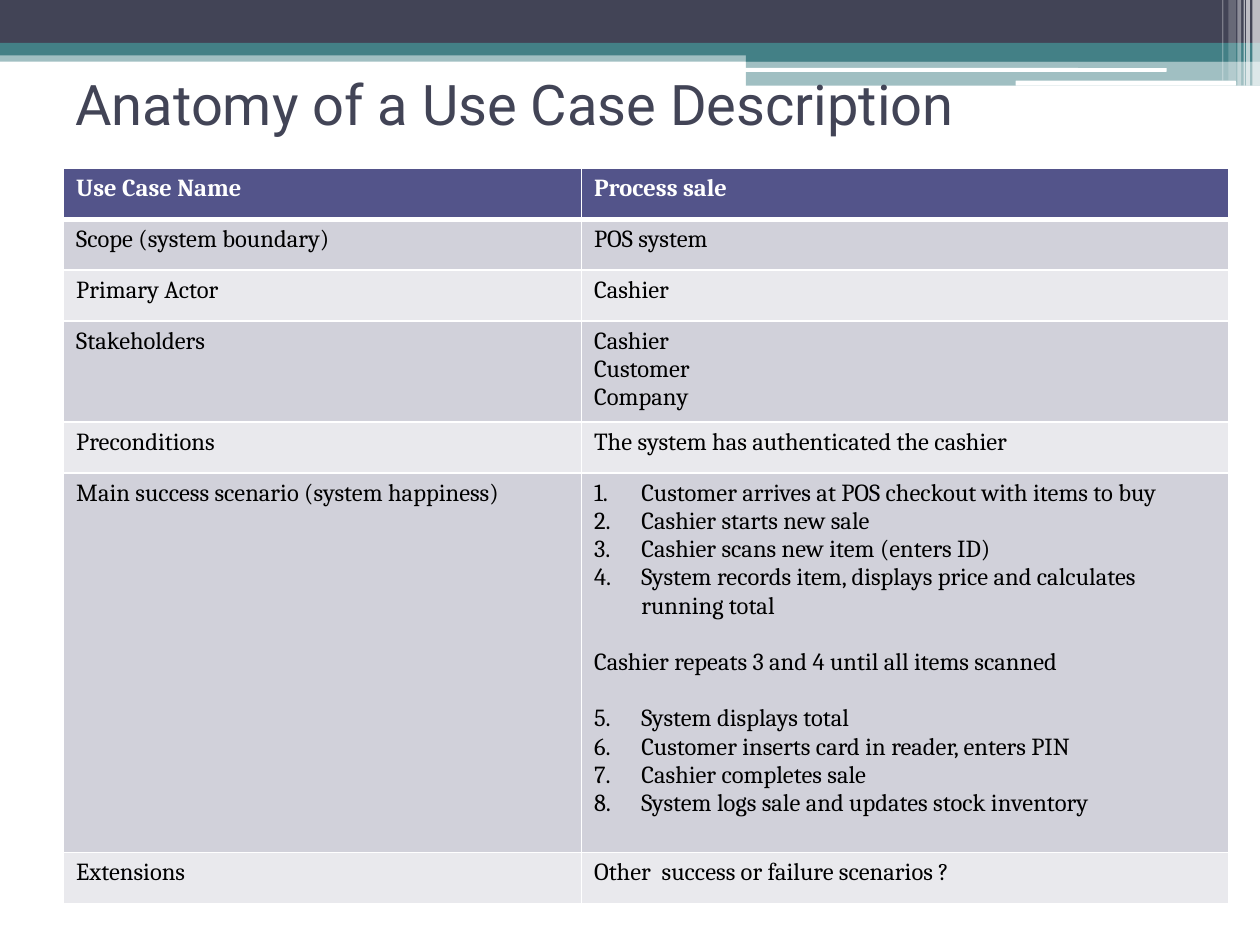
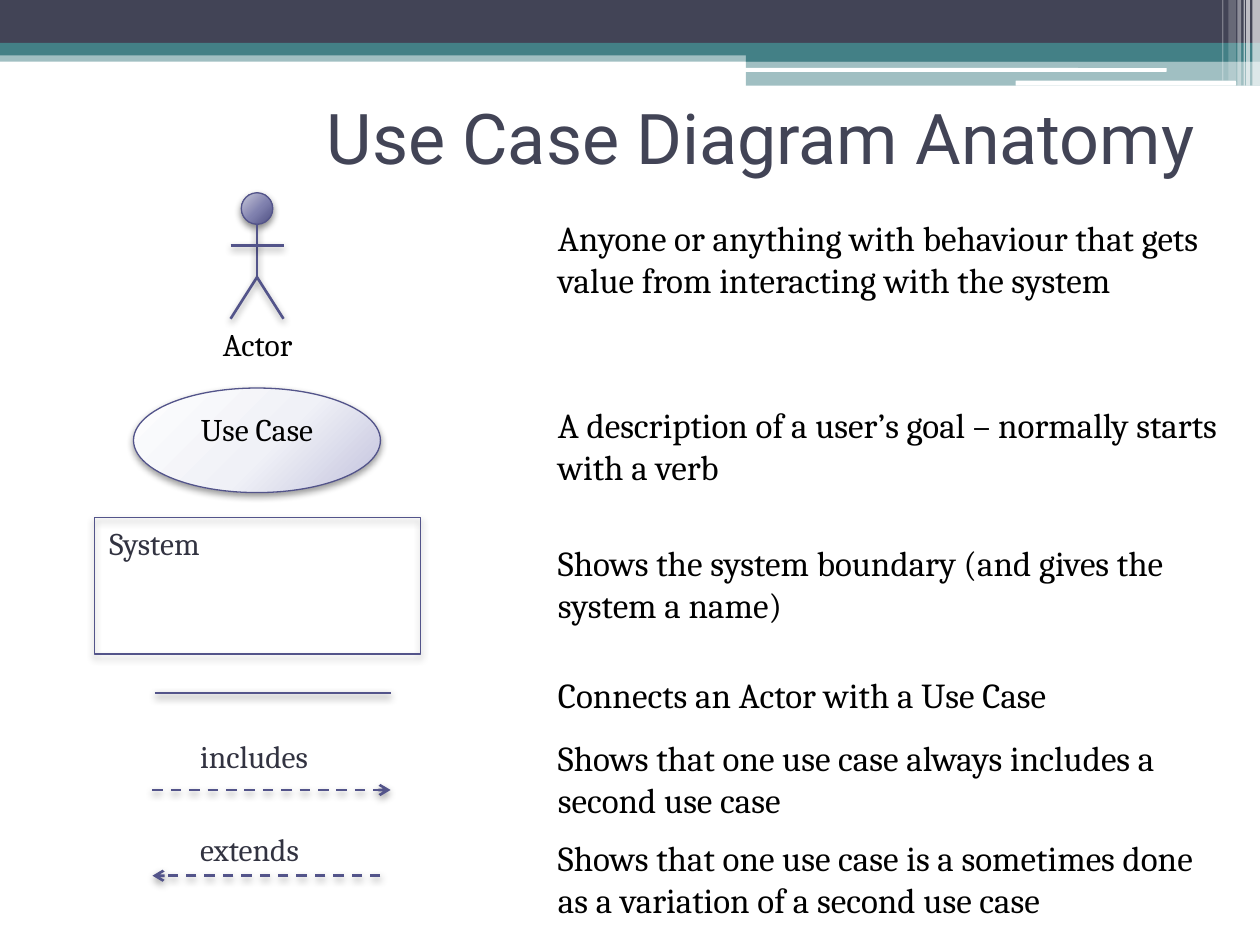
from dataclasses import dataclass

from lxml.etree import SubElement
from pptx import Presentation
from pptx.dml.color import RGBColor
from pptx.enum.dml import MSO_LINE
from pptx.enum.shapes import MSO_CONNECTOR, MSO_SHAPE
from pptx.enum.text import MSO_ANCHOR as Anchor, PP_ALIGN as Align
from pptx.oxml.ns import qn
from pptx.util import Inches, Pt

COLUMNS, ROWS = 100, 75
WIDTH, HEIGHT = Inches(10), Inches(7.5)


@dataclass(frozen=True)
class Theme:
    """Colours, fonts and type sizes shared by the slides."""
    navy: str = "424456"
    teal: str = "438086"
    violet: str = "53548A"
    slate: str = "323341"
    white: str = "FFFFFF"
    black: str = "000000"
    stripes: tuple = ("E9E9ED", "D1D1DA")
    head_glow: tuple = ("C9C9DA", "7F80AE", "4D4E81")
    oval_glow: tuple = ("FEFEFE", "F0F1F7", "C2C2DD")
    heading: str = "Roboto"
    body: str = "Cambria"
    cell_size: int = 14
    label_size: int = 18
    legend_size: int = 20
    thin: float = 0.75
    stroke: float = 1.5


@dataclass(frozen=True)
class Line:
    """One line of a table cell, with its list number and the gap above it."""
    text: str
    first_number: int = 0
    gap: float = 0


THEME = Theme()

BANDS = [
    ((0, 4, 100, 0.9), THEME.teal, 50),
    ((0, 0, 100, 3.4), THEME.navy, 100),
    ((0, 3.4, 100, 1), THEME.teal, 100),
    ((59.2, 3.9, 40.8, 1), THEME.teal, 100),
    ((59.2, 4.8, 40.8, 2), THEME.teal, 50),
]
PILLS = [(59.1, 5.4, 33.5, 0.3), (80.6, 6.4, 17.5, 0.4)]
PINSTRIPES = [
    (99.4, 0.6, 6.8, 65), (98.9, 0.3, 6.8, 65), (98.7, 0.1, 6.8, 60),
    (98.2, 0.3, 6.8, 40), (97.5, 0.6, 6.4, 20), (97, 0.1, 6.4, 30),
]

LINE_GAP = 16.1
SCENARIO = [
    Line("Customer arrives at POS checkout with items to buy", 1),
    Line("Cashier starts new sale", 1),
    Line("Cashier scans new item (enters ID)", 1),
    Line("System records item, displays price and calculates running total", 1),
    Line("Cashier repeats 3 and 4 until all items scanned", gap=LINE_GAP),
    Line("System displays total", 5, LINE_GAP),
    Line("Customer inserts card in reader, enters PIN", 5),
    Line("Cashier completes sale", 5),
    Line("System logs sale and updates stock inventory", 5),
]
ROW = 4.05
USE_CASE = [
    ("Use Case Name", [Line("Process sale")], ROW),
    ("Scope (system boundary)", [Line("POS system")], ROW),
    ("Primary Actor", [Line("Cashier")], ROW),
    ("Stakeholders", [Line("Cashier"), Line("Customer"), Line("Company")], 7.7),
    ("Preconditions", [Line("The system has authenticated the cashier")], ROW),
    ("Main success scenario (system happiness)", SCENARIO, 30.1),
    ("Extensions", [Line("Other  success or failure scenarios ?")], ROW),
]

LEGEND = [
    (16.7, "Anyone or anything with behaviour that gets value from interacting with the system"),
    (31.5, "A description of a user’s goal – normally starts with a verb"),
    (42.5, "Shows the system boundary (and gives the system a name)"),
    (53, "Connects an Actor with a Use Case"),
    (58, "Shows that one use case always includes a second use case"),
    (65.9, "Shows that one use case is a sometimes done as a variation of a second use case"),
]


def across(columns):
    """Turn grid columns into a length."""
    return round(WIDTH * columns / COLUMNS)


def down(rows):
    """Turn grid rows into a length."""
    return round(HEIGHT * rows / ROWS)


def place(left, top, width, height):
    """Turn a frame on the grid into lengths."""
    return across(left), down(top), across(width), down(height)


def element(parent, tag, **attributes):
    """Append a drawing element with the given attributes."""
    child = SubElement(parent, qn(f"a:{tag}"))
    for key, value in attributes.items():
        child.set(key, str(value))
    return child


def paint(fill, color, opacity=100):
    """Fill with one colour, made see-through below full opacity."""
    fill.solid()
    fill.fore_color.rgb = RGBColor.from_string(color)
    if opacity < 100:
        element(fill._xPr.find(".//" + qn("a:srgbClr")), "alpha", val=opacity * 1000)


def glow(shape, colors):
    """Fill a shape with a round gradient centred beyond its top left."""
    gradient = element(shape._element.spPr, "gradFill", rotWithShape=1)
    stops = element(gradient, "gsLst")
    for position, color in zip((0, 55, 100), colors):
        stop = element(stops, "gs", pos=position * 1000)
        element(stop, "srgbClr", val=color)
    circle = element(gradient, "path", **{"path": "circle"})
    element(circle, "fillToRect", l=-40000, t=-90000, r=140000, b=190000)
    shape._element.spPr.find(qn("a:prstGeom")).addnext(gradient)


def outline(shape, width):
    """Draw a violet outline of the given width."""
    shape.line.color.rgb = RGBColor.from_string(THEME.violet)
    shape.line.width = Pt(width)


def cast_shadow(shape, opacity=40, blur=4.1):
    """Give a shape a soft shadow straight below it."""
    effects = element(shape._element.spPr, "effectLst")
    shadow = element(effects, "outerShdw", blurRad=Pt(blur), dist=Pt(2),
                     dir=5400000, algn="ctr", rotWithShape=0)
    color = element(shadow, "srgbClr", val=THEME.black)
    element(color, "alpha", val=opacity * 1000)


def write(paragraph, text, color, **looks):
    """Write one run and set its font from the given values."""
    run = paragraph.add_run()
    run.text = text
    for key, value in looks.items():
        setattr(run.font, key, value)
    run.font.color.rgb = RGBColor.from_string(color)


def indent(paragraph, left, first=0):
    """Indent a paragraph by grid columns and return its properties."""
    properties = paragraph._p.get_or_add_pPr()
    properties.set("marL", str(across(left)))
    properties.set("indent", str(across(first)))
    return properties


def add_text(slide, frame, text, color, size, align=Align.LEFT,
             anchor=Anchor.TOP, font=THEME.body):
    """Add a wrapped text box and return its paragraph."""
    words = slide.shapes.add_textbox(*place(*frame)).text_frame
    words.word_wrap = True
    words.vertical_anchor = anchor
    paragraph = words.paragraphs[0]
    paragraph.alignment = align
    write(paragraph, text, color, name=font, size=Pt(size))
    return paragraph


def add_title(slide, frame, text, size, align=Align.LEFT):
    """Add the slide title."""
    add_text(slide, frame, text, THEME.navy, size, align, Anchor.MIDDLE, THEME.heading)


def add_band(slide, frame, color, opacity=100, kind=MSO_SHAPE.RECTANGLE):
    """Add one flat piece of the header."""
    band = slide.shapes.add_shape(kind, *place(*frame))
    band.shadow.inherit = False
    band.line.fill.background()
    paint(band.fill, color, opacity)


def add_header(slide):
    """Add the bands, pills and pinstripes at the top."""
    for frame, color, opacity in BANDS:
        add_band(slide, frame, color, opacity)
    for frame in PILLS:
        add_band(slide, frame, THEME.white, kind=MSO_SHAPE.ROUNDED_RECTANGLE)
    for left, width, height, opacity in PINSTRIPES:
        add_band(slide, (left, 0, width, height), THEME.white, opacity)


def add_stroke(shapes, start, end, dashed_arrow=False):
    """Add a violet line between two grid points, as a dashed arrow if asked."""
    stroke = shapes.add_connector(
        MSO_CONNECTOR.STRAIGHT, across(start[0]), down(start[1]), across(end[0]), down(end[1]))
    outline(stroke, THEME.stroke)
    if dashed_arrow:
        stroke.line.dash_style = MSO_LINE.DASH
        element(stroke.line._get_or_add_ln(), "tailEnd", type="arrow")
    cast_shadow(stroke)


def add_oval(shapes, frame, colors, **shadow):
    """Add a glowing ellipse with a shadow."""
    oval = shapes.add_shape(MSO_SHAPE.OVAL, *place(*frame))
    glow(oval, colors)
    outline(oval, THEME.thin)
    cast_shadow(oval, **shadow)
    return oval


def add_actor(slide, middle, top):
    """Add the stick figure as a group."""
    shapes = slide.shapes.add_group_shape().shapes
    add_oval(shapes, (middle - 1.25, top, 2.5, 2.5), THEME.head_glow, opacity=45, blur=4)
    neck, arms, hips, feet = (top + drop for drop in (2.5, 4.2, 6.7, 10))
    left, right = middle - 2.1, middle + 2.1
    add_stroke(shapes, (middle, neck), (middle, hips))
    add_stroke(shapes, (left, arms), (right, arms))
    for foot in (left, right):
        add_stroke(shapes, (middle, hips), (foot, feet))


def add_borders(cell, top, bottom):
    """Give a cell white borders, with widths for its top and bottom."""
    properties = cell._tc.get_or_add_tcPr()
    for side, width in (("lnL", 1), ("lnR", 1), ("lnT", top), ("lnB", bottom)):
        border = element(properties, side, w=Pt(width))
        element(element(border, "solidFill"), "srgbClr", val=THEME.white)


def fill_cell(cell, lines, row):
    """Write a cell and colour it as header or stripe."""
    header = row == 0
    add_borders(cell, 3 if row == 1 else 1, 3 if header else 1)
    paint(cell.fill, THEME.violet if header else THEME.stripes[row % 2])
    words = cell.text_frame
    for index, line in enumerate(lines):
        paragraph = words.add_paragraph() if index else words.paragraphs[0]
        if line.gap:
            paragraph.space_before = Pt(line.gap)
        if line.first_number:
            element(indent(paragraph, 3.75, -3.75), "buAutoNum",
                    type="arabicPeriod", startAt=line.first_number)
        write(paragraph, line.text, THEME.white if header else THEME.black,
              name=THEME.body, size=Pt(THEME.cell_size), bold=header)


def add_use_case_table(slide):
    """Add the table that describes one use case."""
    height = sum(rows for _, _, rows in USE_CASE)
    table = slide.shapes.add_table(
        len(USE_CASE), 2, *place(5.05, 13.35, 92.5, height)).table
    for column, width in zip(table.columns, (41.1, 51.4)):
        column.width = across(width)
    for row, (field, lines, rows) in enumerate(USE_CASE):
        table.rows[row].height = down(rows)
        fill_cell(table.cell(row, 0), [Line(field)], row)
        fill_cell(table.cell(row, 1), lines, row)


def add_symbols(slide):
    """Add the diagram symbols and their labels."""
    add_actor(slide, 20.4, 15.3)
    add_text(slide, (12.1, 25.3, 16.7, 4), "Actor", THEME.black, THEME.label_size, Align.CENTER)
    use_case = add_oval(slide.shapes, (10.6, 30.8, 19.6, 8.3), THEME.oval_glow)
    use_case.text_frame.vertical_anchor = Anchor.TOP
    goal = use_case.text_frame.paragraphs[0]
    goal.alignment = Align.CENTER
    write(goal, "Use Case", THEME.black, name=THEME.body, size=Pt(THEME.label_size))
    add_stroke(slide.shapes, (12.3, 55), (31, 55))
    add_stroke(slide.shapes, (12.1, 62.7), (31, 62.7), dashed_arrow=True)
    add_stroke(slide.shapes, (30.2, 69.5), (12.1, 69.5), dashed_arrow=True)
    boundary = slide.shapes.add_shape(MSO_SHAPE.RECTANGLE, *place(7.5, 41.1, 25.9, 10.8))
    boundary.fill.background()
    outline(boundary, THEME.thin)
    cast_shadow(boundary)
    for frame, label in (((14.9, 58, 11.3, 4), "includes"),
                         ((14.9, 65.4, 10.6, 4), "extends"),
                         ((7.7, 41.1, 21.2, 4), "System")):
        add_text(slide, frame, label, THEME.slate, THEME.label_size)


def add_legend(slide):
    """Add the explanation beside each symbol."""
    for top, meaning in LEGEND:
        height = 4.4 if top == 53 else 7.7
        indent(add_text(slide, (38.3, top, 60, height), meaning,
                        THEME.black, THEME.legend_size), 5)


def main():
    """Build and save the two slides."""
    deck = Presentation()
    deck.slide_width, deck.slide_height = WIDTH, HEIGHT
    description, diagram = (deck.slides.add_slide(deck.slide_layouts[6]) for _ in range(2))
    for slide in (description, diagram):
        add_header(slide)
    add_title(description, (5, 3, 90, 10.3), "Anatomy of a Use Case Description", 32)
    add_use_case_table(description)
    add_title(diagram, (5.8, 5, 90, 11.7), "Use Case Diagram Anatomy", 40, Align.RIGHT)
    add_symbols(diagram)
    add_legend(diagram)
    deck.save("out.pptx")


if __name__ == "__main__":
    main()
